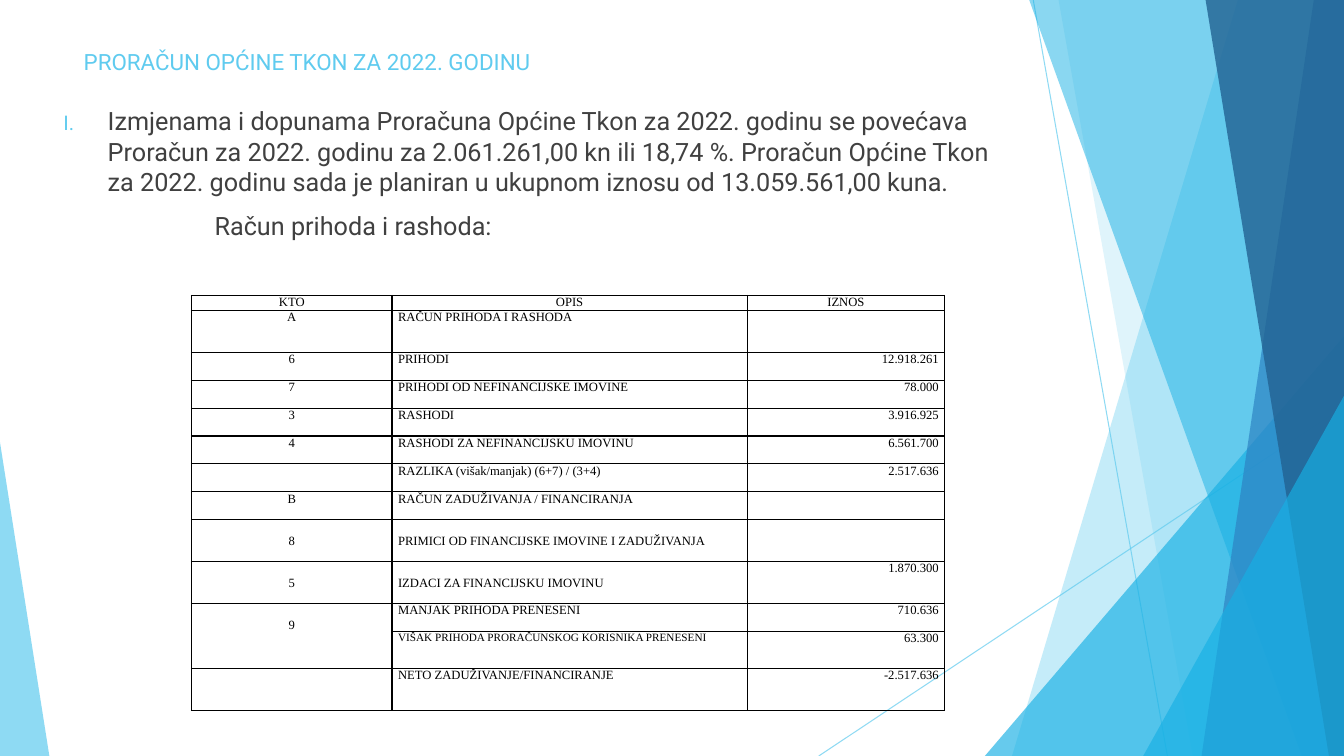
from lxml.etree import SubElement
from pptx import Presentation
from pptx.dml.color import RGBColor
from pptx.enum.shapes import MSO_CONNECTOR, MSO_SHAPE
from pptx.enum.text import MSO_ANCHOR, PP_ALIGN
from pptx.oxml.ns import qn
from pptx.util import Inches, Pt

WIDE, HIGH = Inches(13.33), Inches(7.5)
HUES = {"sky": "5FCBEF", "cyan": "17B0E4", "blue": "2E83C3",
        "navy": "226292", "gray": "404040", "black": "000000"}
BANDS = [
    ("sky", 36, 92.1, 75.3),
    ("sky", 20, 78.76, 88.75),
    ("cyan", 66, 73.28, 44.45, 26.72, 1),
    ("cyan", 50, 76.58, 96.85),
    ("blue", 70, 97.75, 89.4),
    ("navy", 80, 89.7, 98.88),
    ("cyan", 66, 85.06, 52.36, 14.94, 1),
    ("sky", 70, 0, 58.53, 3.67, 0),
]
COLS = [14.92, 26.42, 14.7]
LOW, MID, TALL = 3.69, 4.93, 5.54
DROP = Pt(10.35)
ALIGN = [PP_ALIGN.CENTER, PP_ALIGN.JUSTIFY, PP_ALIGN.RIGHT]
ROWS = [
    (1.96, "KTO", "OPIS", "IZNOS"),
    (TALL, "A", "RAČUN PRIHODA I RASHODA", ""),
    (LOW, "6", "PRIHODI", "12.918.261"),
    (LOW, "7", "PRIHODI OD NEFINANCIJSKE IMOVINE", "78.000"),
    (LOW, "3", "RASHODI", "3.916.925"),
    (LOW, "4", "RASHODI ZA NEFINANCIJSKU IMOVINU", "6.561.700"),
    (LOW, "", "RAZLIKA (višak/manjak) (6+7) / (3+4)", "2.517.636"),
    (LOW, "B", "RAČUN ZADUŽIVANJA / FINANCIRANJA", ""),
    (TALL, "8", "PRIMICI OD FINANCIJSKE IMOVINE I ZADUŽIVANJA", ""),
    (TALL, "5", "IZDACI ZA FINANCIJSKU IMOVINU", "1.870.300"),
    (LOW, "9", "MANJAK PRIHODA PRENESENI", "710.636"),
    (MID, "", "VIŠAK PRIHODA PRORAČUNSKOG KORISNIKA PRENESENI", "63.300"),
    (TALL, "", "NETO ZADUŽIVANJE/FINANCIRANJE", "-2.517.636"),
]
DROPS = {(8, 0), (8, 1), (9, 0), (9, 1), (10, 0)}
SMALL = (11, 1)


def across(share):
    return round(WIDE * share / 100)


def down(share):
    return round(HIGH * share / 100)


def area(left, top, width, height):
    return across(left), down(top), across(width), down(height)


def tint(fill, hue, alpha):
    fill.solid()
    fill.fore_color.rgb = RGBColor.from_string(HUES[hue])
    tone = fill._xPr.find(".//" + qn("a:srgbClr"))
    SubElement(tone, qn("a:alpha"), val=str(alpha * 1000))


def style(para, size, hue, face):
    for run in para.runs:
        run.font.size = Pt(size)
        run.font.name = face
        run.font.color.rgb = RGBColor.from_string(HUES[hue])


def ray(slide, start, end):
    line = slide.shapes.add_connector(
        MSO_CONNECTOR.STRAIGHT, across(start[0]), down(start[1]),
        across(end[0]), down(end[1]))
    line.line.width = Pt(0.75)
    tint(line.line.fill, "sky", 70)
    SubElement(line._element.spPr, qn("a:effectLst"))


def finish(shape, hue, alpha):
    tint(shape.fill, hue, alpha)
    shape.line.fill.background()
    shape.shadow.inherit = False


def band(slide, hue, alpha, top, base):
    pen = slide.shapes.build_freeform(across(top), 0)
    pen.add_line_segments([(WIDE, 0), (WIDE, HIGH), (across(base), HIGH)])
    finish(pen.convert_to_shape(), hue, alpha)


def wedge(slide, hue, alpha, left, top, width, peak):
    shape = slide.shapes.add_shape(
        MSO_SHAPE.ISOSCELES_TRIANGLE, *area(left, top, width, 100 - top))
    shape.adjustments[0] = peak
    finish(shape, hue, alpha)


def title(slide, text):
    box = slide.shapes.title
    box.left, box.top, box.width, box.height = area(5.48, 5.73, 70.5, 6.4)
    frame = box.text_frame
    frame.text = text
    frame.word_wrap = True
    frame.vertical_anchor = MSO_ANCHOR.TOP
    para = frame.paragraphs[0]
    para.alignment = PP_ALIGN.LEFT
    style(para, 16, "sky", "Roboto")


def number(props):
    tone = SubElement(props, qn("a:buClr"))
    SubElement(tone, qn("a:srgbClr"), val=HUES["sky"])
    SubElement(props, qn("a:buSzPct"), val="80000")
    SubElement(props, qn("a:buFont"), typeface="Roboto")
    SubElement(props, qn("a:buAutoNum"), type="romanUcPeriod")


def body(slide, lead, label):
    frame = slide.shapes.add_textbox(*area(3.98, 13.33, 70.5, 20)).text_frame
    frame.word_wrap = True
    frame.text = lead
    frame.add_paragraph().text = label
    for para, left, hang in zip(frame.paragraphs, (3.3, 11.25), (-3.3, 0)):
        para.space_before = Pt(10)
        style(para, 18, "gray", "Roboto")
        props = para._p.get_or_add_pPr()
        props.set("marL", str(across(left)))
        props.set("indent", str(across(hang)))
    number(frame.paragraphs[0]._p.get_or_add_pPr())


def border(cell):
    props = cell._tc.get_or_add_tcPr()
    for side in ("a:lnL", "a:lnR", "a:lnT", "a:lnB"):
        line = SubElement(props, qn(side), w=str(Pt(1)))
        fill = SubElement(line, qn("a:solidFill"))
        SubElement(fill, qn("a:srgbClr"), val=HUES["black"])


def entry(cell, text, align, size, top):
    cell.text = text
    cell.margin_left = cell.margin_right = Inches(0.06)
    cell.margin_top, cell.margin_bottom = top, 0
    para = cell.text_frame.paragraphs[0]
    para.alignment = align
    style(para, size, "black", "Times New Roman")
    para._p.get_or_add_endParaRPr().set("sz", str(size * 100))
    border(cell)
    cell.fill.background()


def ledger(slide):
    high = sum(row[0] for row in ROWS)
    grid = slide.shapes.add_table(
        len(ROWS), len(COLS), *area(14.25, 39.07, sum(COLS), high)).table
    grid.first_row = grid.horz_banding = False
    for col, width in zip(grid.columns, COLS):
        col.width = across(width)
    for r, (height, *texts) in enumerate(ROWS):
        grid.rows[r].height = down(height)
        for c, text in enumerate(texts):
            align = ALIGN[c] if r else PP_ALIGN.CENTER
            size = 8 if (r, c) == SMALL else 9
            top = DROP if (r, c) in DROPS else 0
            entry(grid.cell(r, c), text, align, size, top)
    grid.cell(10, 0).merge(grid.cell(11, 0))


def main():
    deck = Presentation()
    deck.slide_width, deck.slide_height = WIDE, HIGH
    slide = deck.slides.add_slide(deck.slide_layouts[5])
    ray(slide, (76.88, 0), (86.86, 100))
    ray(slide, (100, 53.77), (60.92, 100))
    for item in BANDS:
        draw = band if len(item) == 4 else wedge
        draw(slide, *item)
    title(slide, "PRORAČUN OPĆINE TKON ZA 2022. GODINU")
    body(slide,
         "Izmjenama i dopunama Proračuna Općine Tkon za 2022. godinu se "
         "povećava Proračun za 2022. godinu za 2.061.261,00 kn ili 18,74 %. "
         "Proračun Općine Tkon za 2022. godinu sada je planiran u ukupnom "
         "iznosu od 13.059.561,00 kuna.",
         "Račun prihoda i rashoda:")
    ledger(slide)
    deck.save("out.pptx")


if __name__ == "__main__":
    main()
